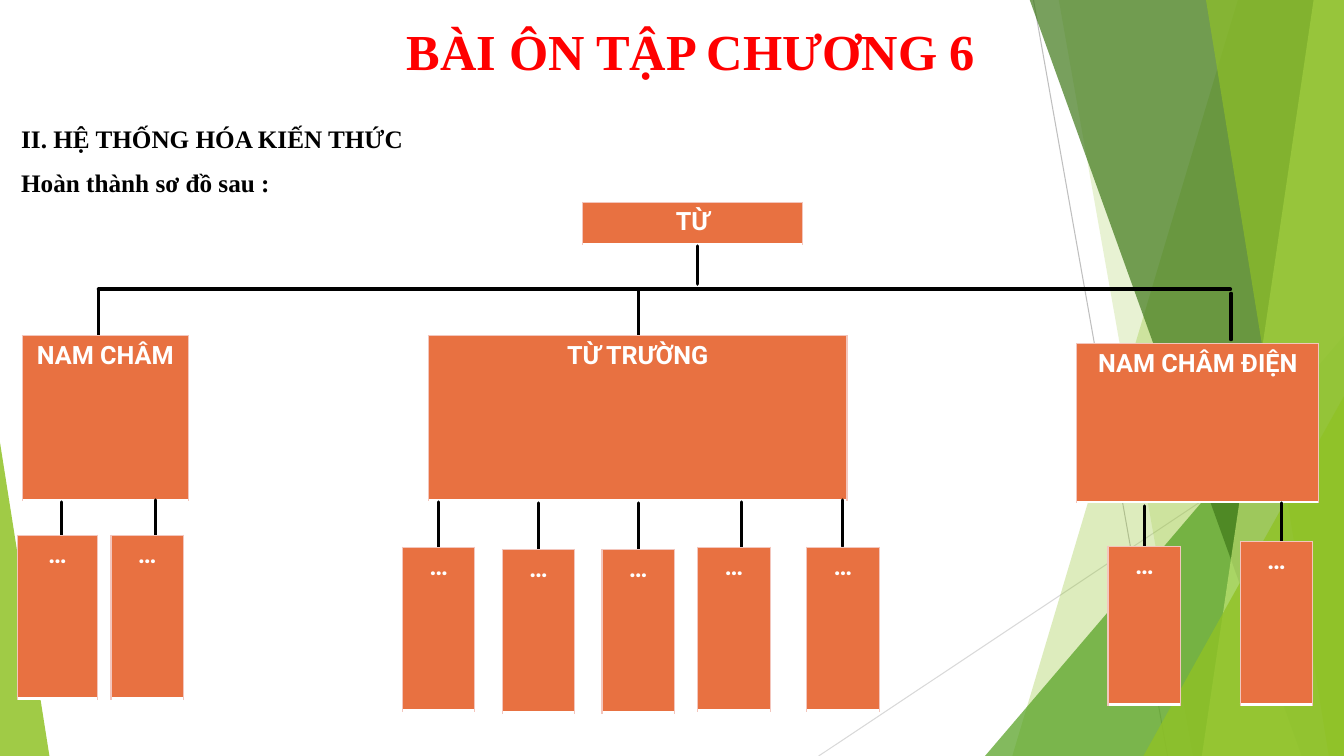
from lxml.etree import SubElement
from pptx import Presentation
from pptx.dml.color import RGBColor
from pptx.enum.shapes import MSO_CONNECTOR as Connector, MSO_SHAPE as Preset
from pptx.enum.text import MSO_ANCHOR as Anchor, MSO_AUTO_SIZE as AutoSize, PP_ALIGN as Align
from pptx.oxml.ns import qn
from pptx.util import Pt

PX = 9144
WIDTH, HEIGHT = 1333, 750
ORANGE, PINK, WHITE, BLACK, RED = "E87141", "F3C6BD", "FFFFFF", "000000", "FF0000"
STEM = 46
LABEL = {"size": Pt(18), "name": "Roboto", "bold": True}
TITLE = {"size": Pt(36), "name": "Times New Roman", "bold": True}
BODY = {"size": Pt(18), "name": "Times New Roman", "bold": True}

THIN_LINES = [((1025, 0, 1158, 750), "BFBFBF"), ((1333, 403, 812, 750), "D9D9D9")]
FACETS = [
    ("panel", (1228, 1004), "90C226", 30),
    ("panel", (1050, 1183), "90C226", 20),
    ("triangle", (977, 333, 356, 417, 1), "54A021", 72),
    ("panel", (1021, 1291), "3F7819", 70),
    ("panel", (1303, 1192), "C0E474", 70),
    ("panel", (1196, 1318), "90C226", 65),
    ("triangle", (1134, 393, 199, 357, 1), "90C226", 80),
    ("triangle", (0, 439, 49, 311, 0), "90C226", 85),
]

BRANCHES = [
    ("NAM CHÂM", (22, 333, 165, 163), (98, 287),
     [(39, 2, -5, 35, 80, 162), (132, 0, 88, 35, 72, 162)]),
    ("TỪ TRƯỜNG", (425, 333, 415, 163), (633, 287),
     [(10, 2, -26, 47, 72, 162), (109, 3, 73, 49, 72, 162), (208, 3, 172, 49, 72, 162),
      (310, 2, 267, 47, 72, 162), (411, 0, 375, 47, 72, 162)]),
    ("NAM CHÂM ĐIỆN", (1068, 341, 240, 157), (1221, 291),
     [(67, 4, 31, 44, 72, 157), (203, 1, 162, 39, 72, 162)]),
]


def rgb(value):
    """Turn a hex string into a colour."""
    return RGBColor.from_string(value)


def emu(*lengths):
    """Turn px lengths into EMU."""
    return [length * PX for length in lengths]


def format_font(font, values, color):
    """Apply a dict of font values and a colour."""
    for name, value in values.items():
        setattr(font, name, value)
    font.color.rgb = rgb(color)


def draw_line(slide, ends, color=BLACK, weight=2.25):
    """Draw a straight line without shadow between two points."""
    connector = slide.shapes.add_connector(Connector.STRAIGHT, *emu(*ends))
    connector.line.color.rgb = rgb(color)
    connector.line.width = Pt(weight)
    connector.get_or_add_ln().set("cap", "rnd")
    SubElement(connector.element.spPr, qn("a:effectLst"))


def draw_stem(slide, x, y, length=STEM):
    """Draw a vertical line down from a point."""
    draw_line(slide, (x, y, x, y + length))


def draw_facet(slide, kind, geometry, color, opacity):
    """Draw one translucent background facet."""
    if kind == "panel":
        top_x, bottom_x = geometry
        builder = slide.shapes.build_freeform(top_x, -1, scale=PX)
        builder.add_line_segments([(WIDTH, -1), (WIDTH, HEIGHT), (bottom_x, HEIGHT)])
        shape = builder.convert_to_shape()
    else:
        *box, apex = geometry
        shape = slide.shapes.add_shape(Preset.ISOSCELES_TRIANGLE, *emu(*box))
        shape.adjustments[0] = apex
    shape.shadow.inherit = False
    shape.line.fill.background()
    shape.fill.solid()
    shape.fill.fore_color.rgb = rgb(color)
    color_element = shape.element.spPr.find(qn("a:solidFill"))[0]
    SubElement(color_element, qn("a:alpha"), val=str(opacity * 1000))


def draw_background(slide):
    """Draw the thin lines and the green facets."""
    for ends, color in THIN_LINES:
        draw_line(slide, ends, color, 0.75)
    for facet in FACETS:
        draw_facet(slide, *facet)


def fill_placeholder(shape, box, lines, font, color, anchor, alignment):
    """Move a placeholder to the front and fill it with plain lines."""
    shape.element.getparent().append(shape.element)
    shape.left, shape.top, shape.width, shape.height = emu(*box)
    frame = shape.text_frame
    frame.text = "\n".join(lines)
    frame.word_wrap = True
    frame.auto_size = AutoSize.NONE
    frame.vertical_anchor = anchor
    for index, paragraph in enumerate(frame.paragraphs):
        paragraph.alignment = alignment
        paragraph.space_before = Pt(10 if index else 0)
        format_font(paragraph.runs[0].font, font, color)
        properties = paragraph._p.get_or_add_pPr()
        properties.set("marL", "0")
        properties.set("indent", "0")
        SubElement(properties, qn("a:buNone"))


def draw_card(slide, box, label):
    """Draw a one-cell table with a centred label."""
    table = slide.shapes.add_table(1, 1, *emu(*box)).table
    table.first_row = table.horz_banding = False
    cell = table.cell(0, 0)
    properties = cell._tc.get_or_add_tcPr()
    for side, color, weight in (("L", PINK, 1), ("R", PINK, 1), ("T", PINK, 1), ("B", WHITE, 2)):
        border = SubElement(properties, qn(f"a:ln{side}"), w=str(Pt(weight)))
        SubElement(SubElement(border, qn("a:solidFill")), qn("a:srgbClr"), val=color)
    cell.fill.solid()
    cell.fill.fore_color.rgb = rgb(ORANGE)
    cell.text = label
    paragraph = cell.text_frame.paragraphs[0]
    paragraph.alignment = Align.CENTER
    format_font(paragraph.runs[0].font, LABEL, WHITE)


def draw_root(slide, box):
    """Draw the top card, its stem and the bar over the branches."""
    left, top, width, height = box
    draw_card(slide, box, "TỪ")
    draw_stem(slide, left + 114, top + height + 2, 38)
    draw_line(slide, (98, 287, 1220, 287), weight=3)


def draw_branch(slide, label, box, entry, leaves):
    """Draw a branch card with its entry line and leaves below it."""
    left, top, width, height = box
    bottom = top + height
    draw_stem(slide, *entry)
    draw_card(slide, box, label)
    for stem_x, stem_y, leaf_x, leaf_y, leaf_width, leaf_height in leaves:
        draw_stem(slide, left + stem_x, bottom + stem_y)
        draw_card(slide, (left + leaf_x, bottom + leaf_y, leaf_width, leaf_height), "…")


def main():
    """Build the slide and save it."""
    presentation = Presentation()
    presentation.slide_width, presentation.slide_height = emu(WIDTH, HEIGHT)
    slide = presentation.slides.add_slide(presentation.slide_layouts[1])
    draw_background(slide)
    fill_placeholder(slide.placeholders[1], (11, 117, 1286, 622),
                     ["II. HỆ THỐNG HÓA KIẾN THỨC", "Hoàn thành sơ đồ sau :"],
                     BODY, BLACK, Anchor.TOP, Align.LEFT)
    fill_placeholder(slide.shapes.title, (74, 10, 1223, 79), ["BÀI ÔN TẬP CHƯƠNG 6"],
                     TITLE, RED, Anchor.MIDDLE, Align.CENTER)
    draw_root(slide, (578, 201, 218, 41))
    for branch in BRANCHES:
        draw_branch(slide, *branch)
    presentation.save("out.pptx")


if __name__ == "__main__":
    main()
